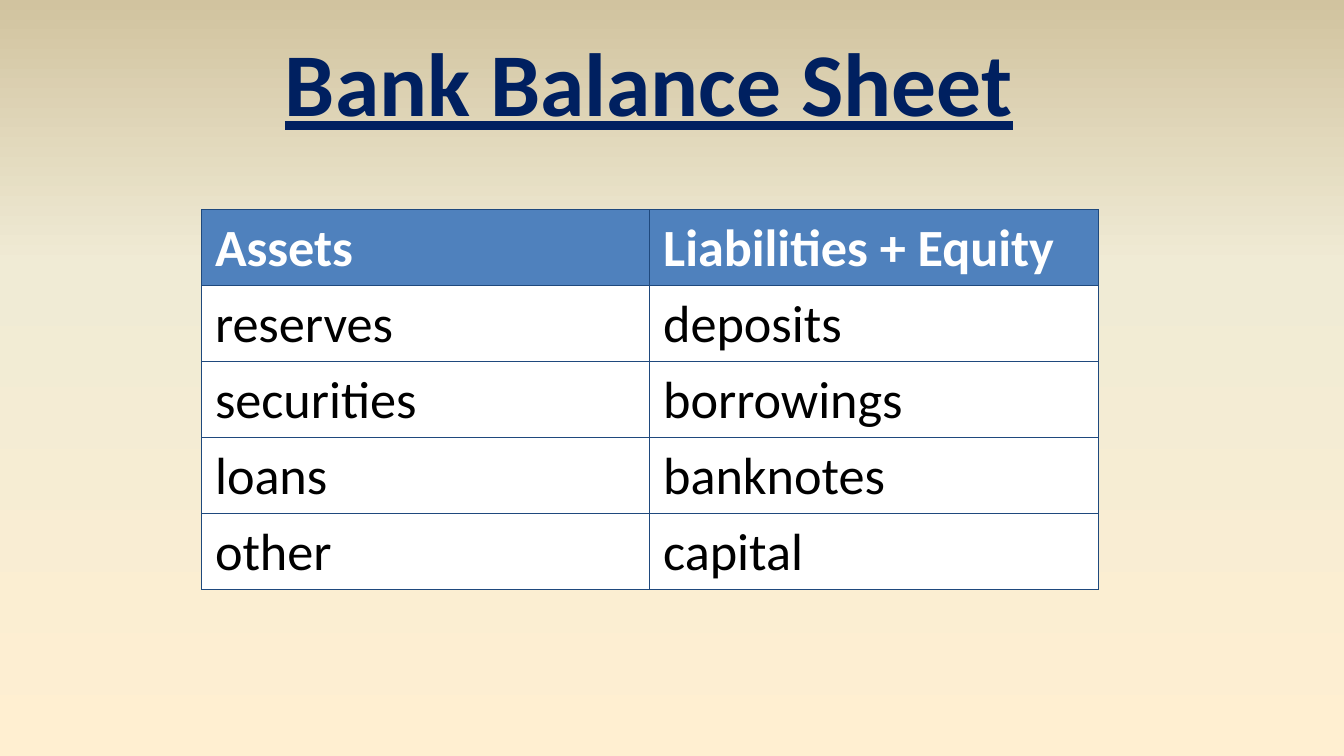
from copy import deepcopy
from typing import NamedTuple

from lxml.etree import SubElement
from pptx import Presentation
from pptx.dml.color import RGBColor
from pptx.enum.text import MSO_ANCHOR, PP_ALIGN
from pptx.oxml.ns import qn
from pptx.slide import Slide
from pptx.table import _Cell as Cell
from pptx.util import Inches, Pt

SLIDE_WIDTH = Inches(10)
SLIDE_HEIGHT = SLIDE_WIDTH * 9 // 16

FONT = "Calibri"
NAVY = RGBColor(0x00, 0x20, 0x60)
BLUE = RGBColor(0x4F, 0x81, 0xBD)
BORDER = RGBColor(0x1F, 0x49, 0x7D)
WHITE = RGBColor(0xFF, 0xFF, 0xFF)
BLACK = RGBColor(0x00, 0x00, 0x00)
CREAM = RGBColor(0xFF, 0xEF, 0xD1)
IVORY = RGBColor(0xF0, 0xEB, 0xD5)
SAND = RGBColor(0xD1, 0xC3, 0x9F)

BACKDROP = ((0, CREAM), (0.65, IVORY), (1, SAND))


class RowStyle(NamedTuple):
    fill: RGBColor
    color: RGBColor
    bold: bool


class Entry(NamedTuple):
    assets: str
    liabilities: str


HEADER = RowStyle(BLUE, WHITE, True)
BODY = RowStyle(WHITE, BLACK, False)
BALANCE_SHEET = (
    Entry("Assets", "Liabilities + Equity"),
    Entry("reserves", "deposits"),
    Entry("securities", "borrowings"),
    Entry("loans", "banknotes"),
    Entry("other", "capital"),
)


def paint_background(slide: Slide) -> None:
    fill = slide.background.fill
    fill.gradient()
    fill.gradient_angle = 90  # runs from bottom to top
    stops = next(slide.element.iter(qn("a:gsLst")))
    stops.append(deepcopy(stops[0]))
    for stop, (position, color) in zip(fill.gradient_stops, BACKDROP):
        stop.position = position
        stop.color.rgb = color


def add_title(slide: Slide, wording: str) -> None:
    title = slide.shapes.title
    title.left, title.top = Inches(1.99), Inches(0.15)
    title.width, title.height = Inches(5.68), Inches(0.91)
    frame = title.text_frame
    frame.text = wording
    frame.word_wrap = False
    frame.vertical_anchor = MSO_ANCHOR.TOP
    heading = frame.paragraphs[0]
    heading.alignment = PP_ALIGN.CENTER
    font = heading.font
    font.name, font.size, font.color.rgb = FONT, Pt(48), NAVY
    font.bold = font.underline = True


def draw_borders(cell: Cell) -> None:
    properties = cell._tc.get_or_add_tcPr()
    for index, side in enumerate(("lnL", "lnR", "lnT", "lnB")):
        line = SubElement(properties, qn(f"a:{side}"), w=str(Pt(0.5)))
        SubElement(SubElement(line, qn("a:solidFill")), qn("a:srgbClr"), val=str(BORDER))
        properties.insert(index, line)  # borders come before the fill


def write_cell(cell: Cell, wording: str, style: RowStyle) -> None:
    cell.text = wording
    cell.margin_top, cell.margin_bottom = Inches(0.05), Inches(0.04)
    cell.fill.solid()
    cell.fill.fore_color.rgb = style.fill
    font = cell.text_frame.paragraphs[0].font
    font.name, font.size = FONT, Pt(28)
    font.bold, font.color.rgb = style.bold, style.color
    draw_borders(cell)


def add_balance_sheet(slide: Slide, entries: tuple[Entry, ...]) -> None:
    height = Inches(2.83)
    holder = slide.shapes.add_table(
        len(entries), len(Entry._fields),
        Inches(1.5), Inches(1.56), Inches(6.67), height,
    )
    sheet = holder.table
    for row, entry in enumerate(entries):
        sheet.rows[row].height = Inches(0.41)  # least height, grows with the text
        for column, wording in enumerate(entry):
            write_cell(sheet.cell(row, column), wording, BODY if row else HEADER)
    holder.height = height


def main() -> None:
    deck = Presentation()
    deck.slide_width, deck.slide_height = SLIDE_WIDTH, SLIDE_HEIGHT
    slide = deck.slides.add_slide(deck.slide_layouts.get_by_name("Title Only"))
    paint_background(slide)
    add_title(slide, "Bank Balance Sheet")
    add_balance_sheet(slide, BALANCE_SHEET)
    deck.save("out.pptx")


if __name__ == "__main__":
    main()
